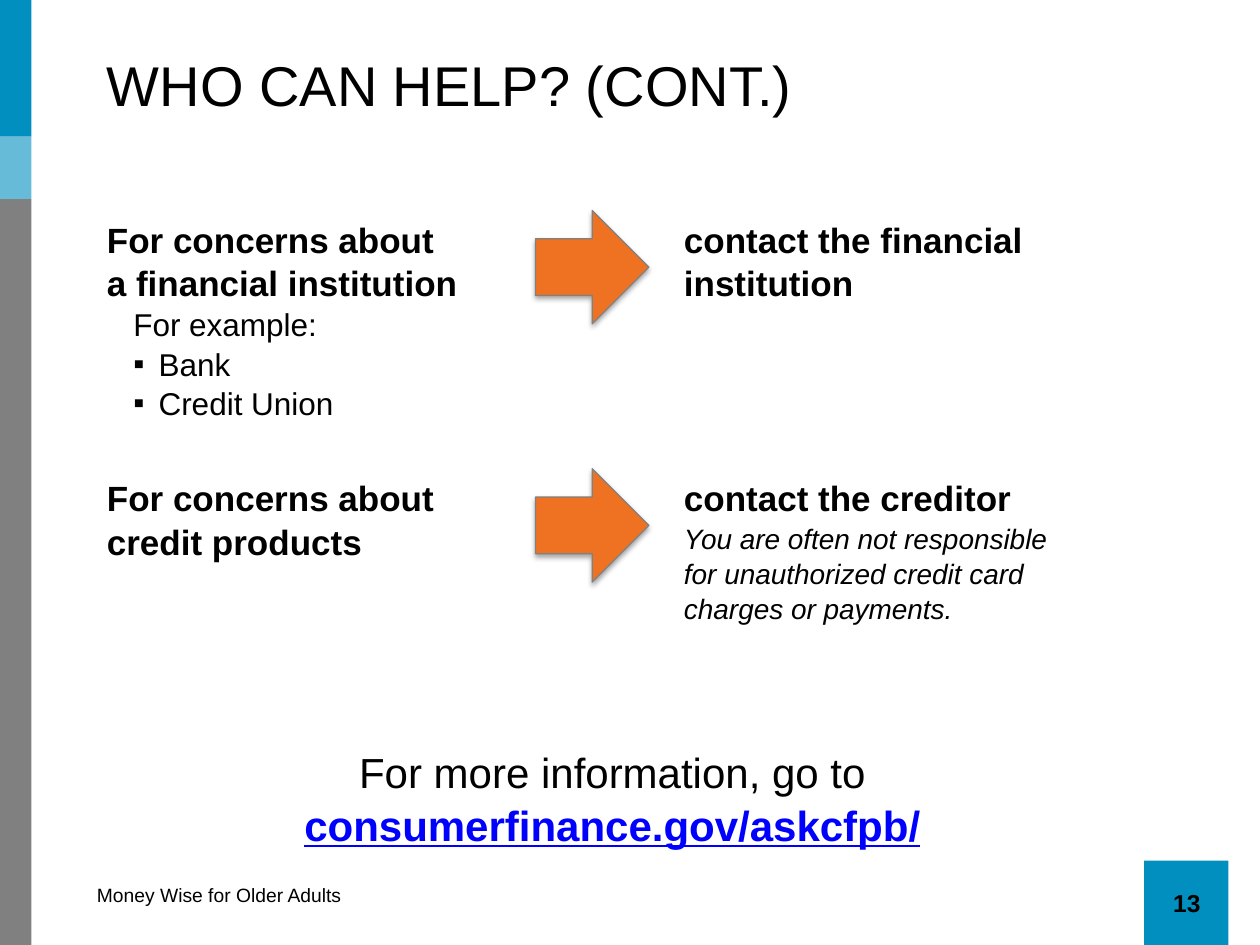
from lxml import etree
from pptx import Presentation
from pptx.dml.color import RGBColor
from pptx.enum.shapes import MSO_SHAPE
from pptx.enum.text import MSO_ANCHOR, PP_ALIGN
from pptx.oxml import parse_xml
from pptx.oxml.ns import nsdecls, qn
from pptx.util import Pt

PX = 9144  # 100 px to the inch
RECT, ARROW = MSO_SHAPE.RECTANGLE, MSO_SHAPE.RIGHT_ARROW
ROUND = MSO_SHAPE.ROUND_2_SAME_RECTANGLE
LEFT, CENTER = PP_ALIGN.LEFT, PP_ALIGN.CENTER
TOP, MIDDLE = MSO_ANCHOR.TOP, MSO_ANCHOR.MIDDLE
BLUE, GRAY, ORANGE = "008FBE", "808080", "EF7122"
SHADOW = f"""<a:effectLst {nsdecls("a")}>
<a:outerShdw blurRad="39370" dist="22860" dir="5400000" rotWithShape="0">
<a:srgbClr val="000000"><a:alpha val="35000"/></a:srgbClr>
</a:outerShdw></a:effectLst>"""

deck = Presentation()
deck.slide_width, deck.slide_height = 1000 * PX, 750 * PX
slide = deck.slides.add_slide(deck.slide_layouts[6])
shapes = slide.shapes


def draw(kind, box, fill=None):
    """Add a preset shape, or a text box if kind is None."""
    box = [n * PX for n in box]
    if kind is None:
        shape = shapes.add_textbox(*box)
    else:
        shape = shapes.add_shape(kind, *box)
        shape.shadow.inherit = False
        shape.line.fill.background()
        shape.fill.background()
    if fill:
        shape.fill.solid()
        shape.fill.fore_color.rgb = RGBColor.from_string(fill)
    return shape


def write(shape, text, size, more=False, bold=False, italic=False, under=False,
          color="000000", align=LEFT, anchor=TOP, space=1.04, inset=0, bullet=None):
    """Write one paragraph; more=True adds it after those already there."""
    frame = shape.text_frame
    frame.word_wrap, frame.vertical_anchor = True, anchor
    par = frame.add_paragraph() if more else frame.paragraphs[0]
    start = len(par.runs)
    par.alignment, par.line_spacing = align, space
    if start:
        par.add_run().text = text
    else:
        par.text = text
    for run in par.runs[start:]:
        font = run.font
        font.name, font.size = "Arial", Pt(size)
        font.bold, font.italic, font.underline = bold, italic, under
        font.color.rgb = RGBColor.from_string(color)
    if inset:
        props = par._p.get_or_add_pPr()
        props.set("marL", str(inset * PX))
        props.set("indent", str(-20 * PX if bullet else 0))
        if bullet:
            etree.SubElement(props, qn("a:buFont")).set("typeface", "Arial")
            etree.SubElement(props, qn("a:buChar")).set("char", bullet)


# Side bar, footer and page number
draw(RECT, (0, 158, 25, 592), GRAY)
band = draw(RECT, (0, 108, 25, 50), BLUE)
tint = band._element.spPr.find(".//" + qn("a:srgbClr"))
etree.SubElement(tint, qn("a:alpha")).set("val", "60000")
draw(RECT, (0, 0, 25, 108), BLUE)
draw(RECT, (908, 683, 67, 67), BLUE)
write(draw(None, (67, 696, 242, 29)), "Money Wise for Older Adults", 11, space=1)
write(draw(None, (917, 700, 50, 34)), "13", 14, bold=True, align=CENTER, space=1)

title = draw(None, (75, 33, 900, 67))
write(title, "WHO CAN HELP? (CONT.)", 32, anchor=MIDDLE, space=1)

# One row per concern: who it is about, an arrow, whom to contact
rows = [
    (167, "For concerns about \va financial institution", 168,
     "contact the financial institution", 77),
    (372, "For concerns about \vcredit products", 108, "contact the creditor", 44),
]
asks = []
for top, ask, tall, who, high in rows:
    box = draw(None, (75, top, 392, tall))
    write(box, ask, 20, bold=True)
    asks.append(box)
    arrow = draw(ARROW, (425, top, 90, 90), ORANGE)
    arrow.line.color.rgb = RGBColor.from_string(GRAY)
    arrow.line.width = Pt(0.75)
    props = arrow._element.spPr
    props.remove(props.find(qn("a:effectLst")))
    props.append(parse_xml(SHADOW))
    write(draw(None, (533, top, 303, high)), who, 20, bold=True)

write(asks[0], "For example:", 18, more=True, inset=21)
for name in ("Bank", "Credit Union"):
    write(asks[0], name, 18, more=True, inset=41, bullet="▪")

note = draw(None, (533, 408, 325, 91))
write(note, "You are often not responsible for unauthorized credit card "
      "charges or payments.", 16, italic=True)

info = draw(ROUND, (192, 583, 588, 95))
write(info, "For more information, go to ", 24, align=CENTER, anchor=MIDDLE)
write(info, "consumerfinance.gov/askcfpb/", 24, bold=True, under=True,
      color="0000FF", align=CENTER, anchor=MIDDLE)

deck.save("out.pptx")
